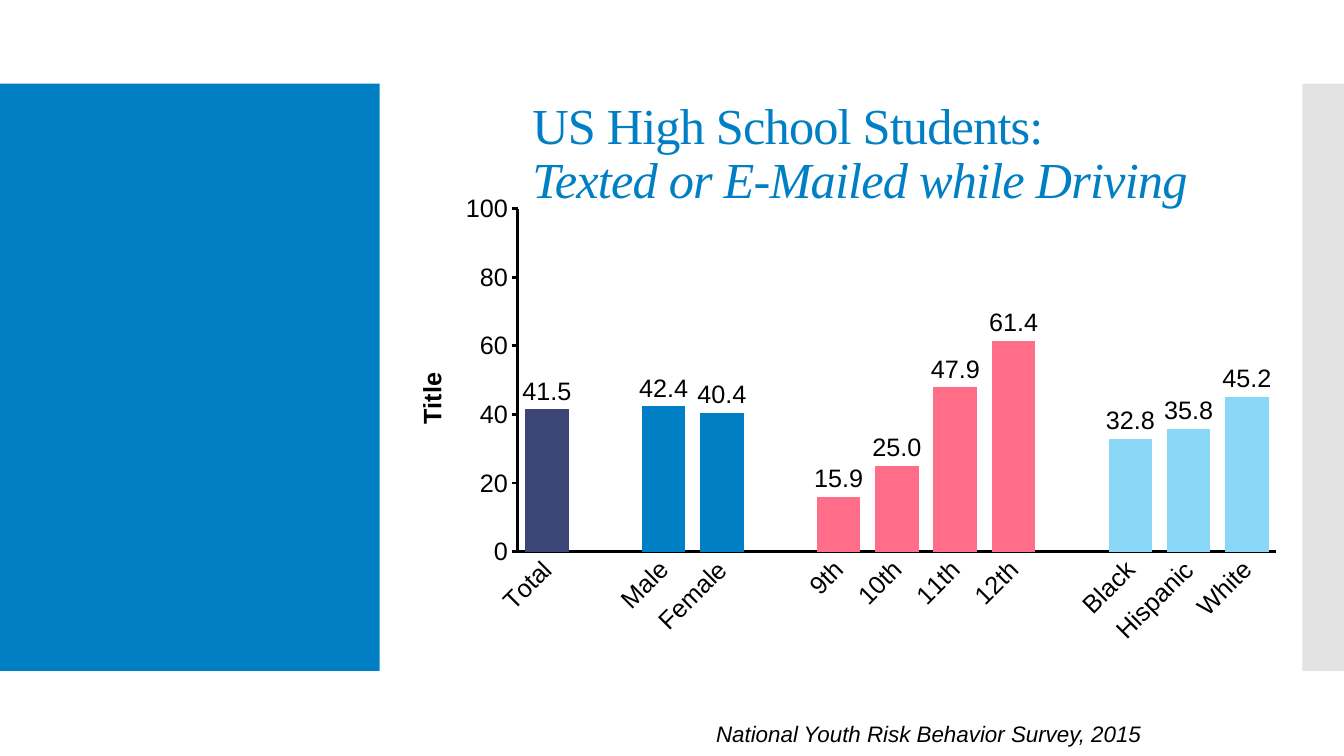
from lxml import etree
from pptx import Presentation, util as u
from pptx.chart.data import CategoryChartData
from pptx.dml.color import RGBColor
from pptx.enum import chart as ch, shapes, text
from pptx.oxml import parse_xml
from pptx.oxml.ns import nsdecls, qn

BLUE = RGBColor(0x00, 0x7F, 0xC4)
NAVY = RGBColor(0x3C, 0x46, 0x76)
PINK = RGBColor(0xFF, 0x6D, 0x88)
SKY = RGBColor(0x89, 0xD6, 0xF7)
GREY = RGBColor(0xC8, 0xC8, 0xC8)
BLACK = RGBColor(0, 0, 0)


def style(font, color=BLACK, **form):
    for key, val in form.items():
        setattr(font, key, val)
    font.color.rgb = color


def layout(x, y, w=None, h=None):
    inner = '<c:layoutTarget val="inner"/>' if w else ""
    modes = '<c:xMode val="edge"/><c:yMode val="edge"/>'
    size = "".join(f'<c:{k} val="{v}"/>' for k, v in zip("xywh", (x, y, w, h)) if v)
    return parse_xml(f'<c:layout {nsdecls("c")}><c:manualLayout>{inner}{modes}{size}'
                     '</c:manualLayout></c:layout>')


prs = Presentation()
prs.slide_width, prs.slide_height = u.Cm(33.87), u.Cm(19.05)
slide = prs.slides.add_slide(prs.slide_layouts[5])

# Side bands
for left, wide, color in ((0, 9.57, BLUE), (32.82, 1.05, GREY)):
    band = slide.shapes.add_shape(shapes.MSO_SHAPE.RECTANGLE,
                                  u.Cm(left), u.Cm(2.11), u.Cm(wide), u.Cm(14.8))
    band.shadow.inherit = False
    band.fill.solid()
    band.fill.fore_color.rgb = color
    band.line.fill.background()
shade = band.fill._xPr.find(qn("a:solidFill"))[0]
etree.SubElement(shade, qn("a:alpha")).set("val", "50000")

# Title
title = slide.shapes.title
title.left, title.top, title.width, title.height = map(u.Cm, (13.16, 2.18, 18.87, 3.45))
frame = title.text_frame
frame.auto_size = text.MSO_AUTO_SIZE.NONE
frame.word_wrap = True
frame.vertical_anchor = text.MSO_ANCHOR.MIDDLE
para = frame.paragraphs[0]
para.alignment = text.PP_ALIGN.LEFT
para.line_spacing = 0.9
for words, slant in (("US High School Students:", False),
                     ("Texted or E-Mailed while Driving", True)):
    if slant:
        para.add_line_break()
    run = para.add_run()
    run.text = words
    style(run.font, BLUE, name="Times New Roman", size=u.Pt(36), italic=slant)
    run.font._element.set("spc", "-60")

# Survey results: groups are set apart by an empty category
groups = (
    (NAVY, (("Total", 41.5),)),
    (BLUE, (("Male", 42.4), ("Female", 40.4))),
    (PINK, (("9th", 15.9), ("10th", 25.0), ("11th", 47.9), ("12th", 61.4))),
    (SKY, (("Black", 32.8), ("Hispanic", 35.8), ("White", 45.2))),
)
bars = []
for color, rows in groups:
    if bars:
        bars.append(("", None, None))
    bars += [(name, val, color) for name, val in rows]

data = CategoryChartData()
data.categories = [name for name, val, color in bars]
data.add_series("Series 1", [val for name, val, color in bars])
chart = slide.shapes.add_chart(ch.XL_CHART_TYPE.COLUMN_CLUSTERED, u.Cm(9.73), u.Cm(4.67),
                               u.Cm(22.89), u.Cm(11.81), data).chart
chart.has_legend = False
chart.has_title = False
base = dict(name="Arial", size=u.Pt(18))
style(chart.font, **base)
area = chart._chartSpace.chart.plotArea
for old in area.findall(qn("c:layout")):
    area.remove(old)
area.insert(0, layout(0.145, 0.05, 0.835, 0.732))

# Columns and value labels
plot = chart.plots[0]
plot.gap_width, plot.overlap = 34, 100
plot.vary_by_categories = False
series = plot.series[0]
series.format.fill.solid()
series.format.fill.fore_color.rgb = BLUE
for spot, (name, val, color) in enumerate(bars):
    if color:
        fill = series.points[spot].format.fill
        fill.solid()
        fill.fore_color.rgb = color
labels = series.data_labels
labels.show_value = True
labels.number_format, labels.number_format_is_linked = "#,##0.0", False
labels.position = ch.XL_LABEL_POSITION.OUTSIDE_END
style(labels.font, **base)

# Axes
cat, scale = chart.category_axis, chart.value_axis
for axis, tick in ((cat, ch.XL_TICK_MARK.NONE), (scale, ch.XL_TICK_MARK.OUTSIDE)):
    axis.has_major_gridlines = False
    axis.major_tick_mark = tick
    axis.minor_tick_mark = ch.XL_TICK_MARK.NONE
    axis.format.line.color.rgb = BLACK
    axis.format.line.width = u.Pt(2)
    style(axis.tick_labels.font, **base)
cat._element.find(qn("c:txPr")).find(qn("a:bodyPr")).set("rot", "-2700000")
scale.minimum_scale, scale.maximum_scale, scale.major_unit = 0, 100, 20
head = scale.axis_title
para = head.text_frame.paragraphs[0]
run = para.add_run()
run.text = "Title"
style(run.font, bold=True, **base)
body = head._element.find(".//" + qn("a:bodyPr"))
body.set("rot", "-5400000")
body.set("vert", "horz")
for old in head._element.findall(qn("c:layout")):
    head._element.remove(old)
head._element.find(qn("c:tx")).addnext(layout(0.027, 0.39))

# Source line
box = slide.shapes.add_textbox(u.Cm(15.04), u.Cm(18.03), u.Cm(13.97), u.Cm(1.63))
box.text_frame.word_wrap = True
para = box.text_frame.paragraphs[0]
para.alignment = text.PP_ALIGN.RIGHT
run = para.add_run()
run.text = "National Youth Risk Behavior Survey, 2015"
style(run.font, name="Arial", size=u.Pt(16), italic=True)

prs.save("out.pptx")
